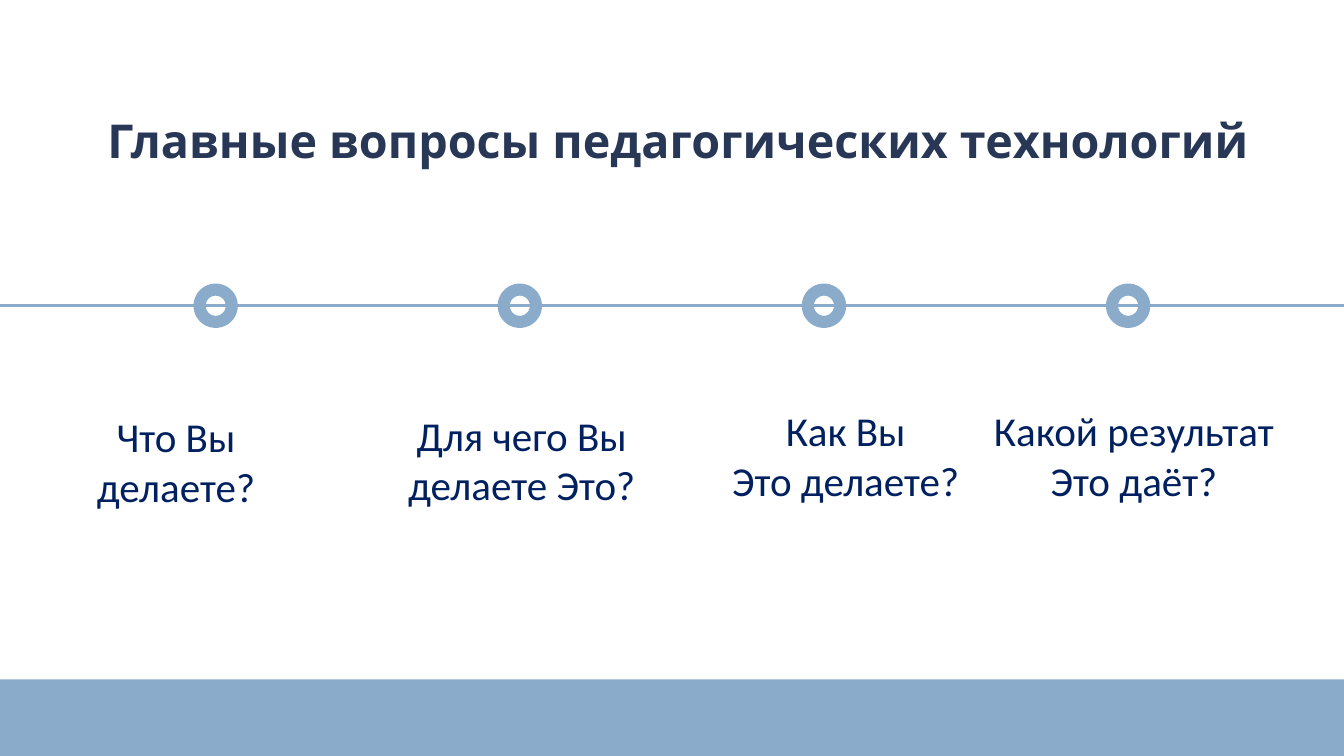
from lxml import etree
from pptx import Presentation
from pptx.dml.color import RGBColor
from pptx.enum.shapes import MSO_CONNECTOR, MSO_SHAPE
from pptx.enum.text import MSO_ANCHOR, MSO_AUTO_SIZE, PP_ALIGN
from pptx.oxml.ns import qn
from pptx.util import Inches, Pt

RECT, DONUT = MSO_SHAPE.RECTANGLE, MSO_SHAPE.DONUT
STRAIGHT = MSO_CONNECTOR.STRAIGHT
CENTER, TOP = PP_ALIGN.CENTER, MSO_ANCHOR.TOP
NO_FIT = MSO_AUTO_SIZE.NONE

BLUE = RGBColor(0x8A, 0xAB, 0xCA)
SLATE = RGBColor(0x27, 0x37, 0x55)
NAVY = RGBColor(0x00, 0x20, 0x60)

WIDTH, HEIGHT = 20, 11.25
AXIS_Y = 4.55
RING_SIZE, RING_BAND = 0.66, 0.18
FIRST_RING_X, RING_STEP = 3.21, 4.526

# Lines of each question, then left, top and width of its box
QUESTIONS = [
    (("Что Вы", "делаете?"), 1.12, 6.08, 3),
    (("Для чего Вы", "делаете Это?"), 5.82, 6.06, 3.89),
    (("Как Вы", "Это делаете?"), 10.64, 5.99, 3.89),
    (("Какой результат", "Это даёт?"), 14.67, 5.99, 4.41),
]


class Deck:
    """Holds the slide style and draws each kind of element."""

    title_font, body_font = "Open Sans", "Calibri"
    title_size, body_size = Pt(50), Pt(44)

    def __init__(self, s):
        self.s = s

    def shape(self, kind, x, y, w, h):
        sp = self.s.shapes.add_shape(kind, Inches(x), Inches(y), Inches(w), Inches(h))
        sp.shadow.inherit = False
        sp.fill.solid()
        sp.fill.fore_color.rgb = BLUE
        sp.line.fill.background()
        return sp

    def ring(self, cx, cy):
        sp = self.shape(DONUT, cx - RING_SIZE / 2, cy - RING_SIZE / 2, RING_SIZE, RING_SIZE)
        sp.adjustments[0] = RING_BAND / RING_SIZE

    def line(self, x1, y1, x2, y2):
        cn = self.s.shapes.add_connector(
            STRAIGHT, Inches(x1), Inches(y1), Inches(x2), Inches(y2))
        cn.line.color.rgb = BLUE
        cn.line.width = Pt(2.75)
        etree.SubElement(cn._element.spPr, qn("a:effectLst"))

    def run(self, p, text, font, size, color, bold=False):
        r = p.add_run()
        r.text = text
        r.font.name, r.font.size, r.font.bold = font, size, bold
        r.font.color.rgb = color

    def title(self, text, x, y, w, h):
        sp = self.s.shapes.title
        sp.left, sp.top, sp.width, sp.height = (Inches(v) for v in (x, y, w, h))
        tf = sp.text_frame
        tf.margin_left = tf.margin_right = tf.margin_top = tf.margin_bottom = 0
        tf.word_wrap, tf.auto_size, tf.vertical_anchor = True, NO_FIT, TOP
        p = tf.paragraphs[0]
        p.alignment, p.line_spacing = CENTER, Pt(70)
        self.run(p, text, self.title_font, self.title_size, SLATE, bold=True)

    def question(self, lines, x, y, w, h=1.58):
        sp = self.s.shapes.add_textbox(Inches(x), Inches(y), Inches(w), Inches(h))
        tf = sp.text_frame
        tf.word_wrap = False
        p = tf.paragraphs[0]
        p.alignment = CENTER
        for i, text in enumerate(lines):
            if i:
                p.add_line_break()
            self.run(p, text, self.body_font, self.body_size, NAVY)


def main():
    prs = Presentation()
    prs.slide_width, prs.slide_height = Inches(WIDTH), Inches(HEIGHT)
    deck = Deck(prs.slides.add_slide(prs.slide_layouts[5]))

    # Bottom band and title
    deck.shape(RECT, 0, 10.11, WIDTH, HEIGHT - 10.11)
    deck.title("Главные вопросы педагогических технологий", 0.69, 1.53, 18.81, 0.98)

    # Timeline with one ring per question
    deck.line(0, AXIS_Y, WIDTH, AXIS_Y)
    for i, (lines, x, y, w) in enumerate(QUESTIONS):
        deck.ring(FIRST_RING_X + i * RING_STEP, AXIS_Y)
        deck.question(lines, x, y, w)

    prs.save("out.pptx")


if __name__ == "__main__":
    main()
